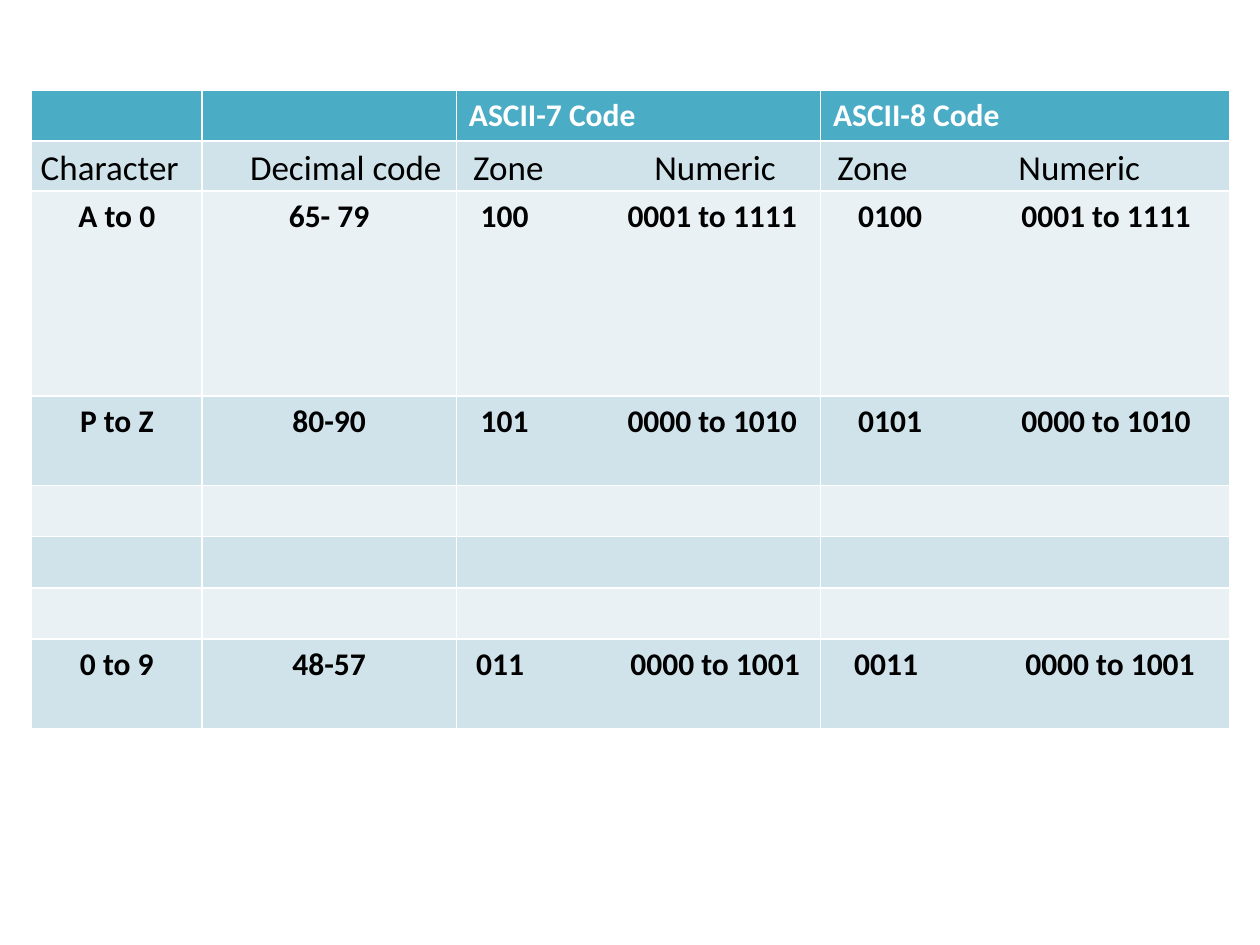
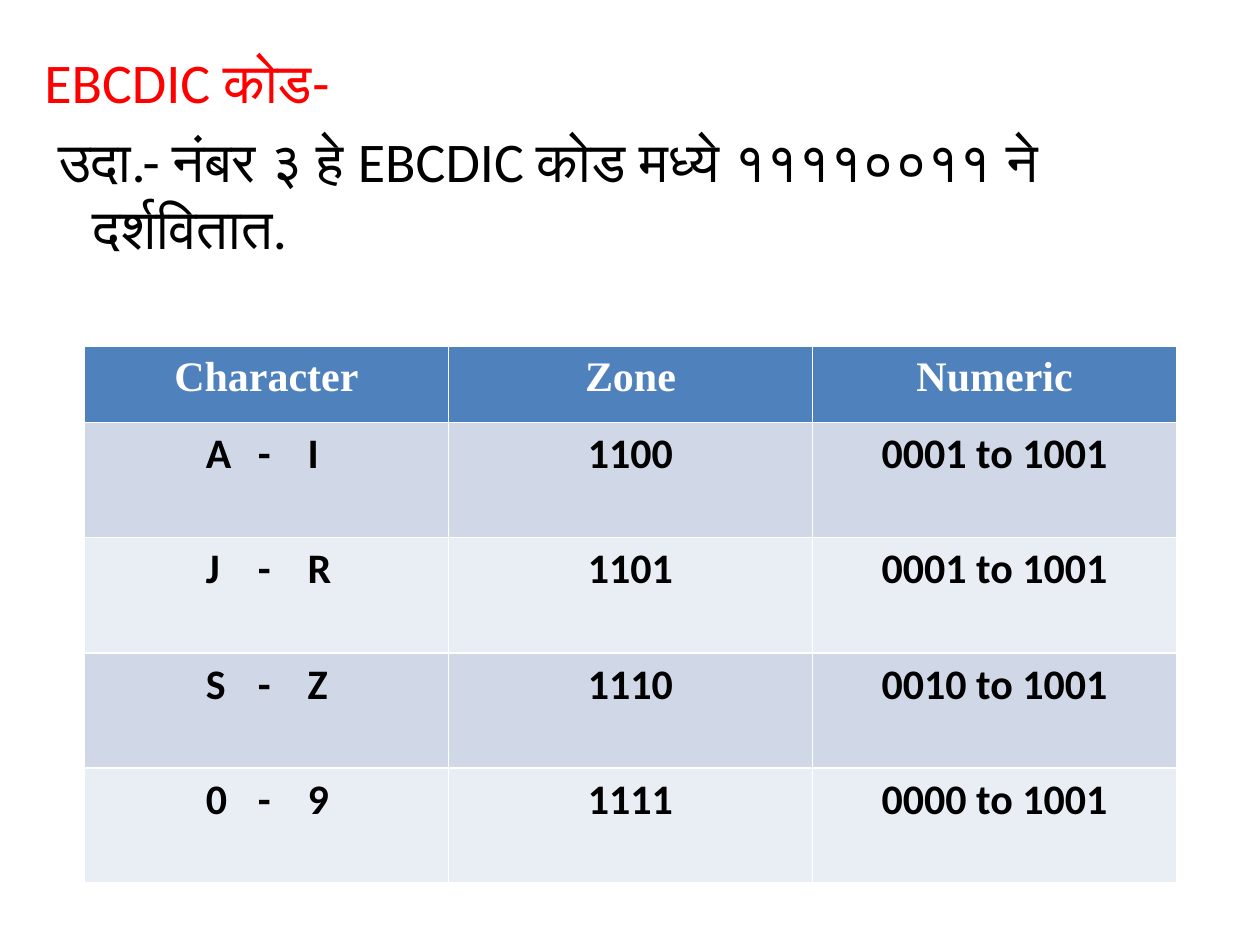
import pptx
import pptx.dml.color
import pptx.enum.text
import pptx.oxml.ns
import pptx.util
from lxml import etree


def colour(hex_value):
    return pptx.dml.color.RGBColor.from_string(hex_value)


def add_property(parent, tag, **attributes):
    return etree.SubElement(parent, pptx.oxml.ns.qn(tag), attributes)


# Shared formats
CENTER = pptx.enum.text.PP_ALIGN.CENTER
LEFT = pptx.enum.text.PP_ALIGN.LEFT
FORMATS = {
    "heading": {"name": "Calibri", "size": pptx.util.Pt(18), "bold": True},
    "serif heading": {"name": "Times New Roman", "size": pptx.util.Pt(24), "bold": True},
    "subheading": {"name": "Calibri", "size": pptx.util.Pt(20), "bold": False},
    "codes": {"name": "Calibri", "size": pptx.util.Pt(18), "bold": True},
    "large codes": {"name": "Calibri", "size": pptx.util.Pt(24), "bold": True},
    "body": {"name": "Calibri", "size": pptx.util.Pt(32), "bold": False},
}
SPACED = ("subheading", "serif heading")  # no top margin, wider lines

deck = pptx.Presentation()
deck.slide_width, deck.slide_height = pptx.util.Cm(25.4), pptx.util.Cm(19.05)

# Slide 1: ASCII codes
ascii_slide = deck.slides.add_slide(deck.slide_layouts[6])

# Slide 2: EBCDIC code, introduction
ebcdic_slide = deck.slides.add_slide(deck.slide_layouts[1])
unused_title = ebcdic_slide.shapes.title
unused_title._element.getparent().remove(unused_title._element)
intro = ebcdic_slide.placeholders[1]
intro_place = {"left": 0.64, "top": 0.84, "width": 23.93, "height": 17.35}
for side, length in intro_place.items():
    setattr(intro, side, pptx.util.Cm(length))

intro_lines = [
    ("EBCDIC कोड-", "FF0000", -0.97),
    ("उदा.- नंबर ३ हे EBCDIC कोड मध्ये ११११००११ ने दर्शवितात.", "000000", -0.69),
]
for number, (wording, text_colour, first_indent) in enumerate(intro_lines):
    line = intro.text_frame.paragraphs[0] if number == 0 else intro.text_frame.add_paragraph()
    run = line.add_run()
    run.text = wording
    for attribute, value in FORMATS["body"].items():
        setattr(run.font, attribute, value)
    run.font.color.rgb = colour(text_colour)
    properties = line._p.get_or_add_pPr()
    properties.set("marL", str(pptx.util.Cm(0.97)))
    properties.set("indent", str(pptx.util.Cm(first_indent)))
    add_property(properties, "a:buNone")

# Table contents: each row is height, format, texts.
# A text with tabs is followed by its left margin and its tab stops.
zone_7, zone_8 = (0.49, [2.96]), (0.76, [3.29])
zone_heading = ("Zone\tNumeric", 0.34, [3.65])
letters = (2.45, [1.05, 2.05])
empty_row = (1.02, "codes", [""] * 4)
code_tables = [
    {
        "slide": ascii_slide,
        "place": (0.64, 1.81),
        "columns": [3.43, 5.13, 7.34, 8.26],
        "heading fill": "4BACC6",
        "bands": ["D0E3EA", "E9F1F5"],
        "rows": [
            (1.01, "heading", ["", "", "ASCII-7 Code", "ASCII-8 Code"]),
            (1.01, "subheading", [("Character", 0.18, []), ("Decimal code", 0.97, []),
                                  zone_heading, zone_heading]),
            (4.13, "codes", ["A to 0", "65- 79", ("100\t0001 to 1111", *zone_7),
                             ("0100\t0001 to 1111", *zone_8)]),
            (1.81, "codes", ["P to Z", "80-90", ("101\t0000 to 1010", *zone_7),
                             ("0101\t0000 to 1010", *zone_8)]),
            empty_row,
            empty_row,
            empty_row,
            (1.81, "codes", ["0 to 9", "48-57", ("011\t0000 to 1001", 0.4, [3.11]),
                             ("0011\t0000 to 1001", 0.68, [3.45])]),
        ],
    },
    {
        "slide": ebcdic_slide,
        "place": (1.7, 6.99),
        "columns": [7.34] * 3,
        "heading fill": "4F81BD",
        "bands": ["D0D8E8", "E9EDF4"],
        "rows": [
            (1.53, "serif heading", ["Character", "Zone", "Numeric"]),
            (2.32, "large codes", [("A\t-\tI", *letters), "1100", "0001 to 1001"]),
            (2.32, "large codes", [("J\t-\tR", *letters), "1101", "0001 to 1001"]),
            (2.32, "large codes", [("S\t-\tZ", *letters), "1110", "0010 to 1001"]),
            (2.32, "large codes", [("0\t-\t9", *letters), "1111", "0000 to 1001"]),
        ],
    },
]

# Build both tables
for code_table in code_tables:
    rows, columns = code_table["rows"], code_table["columns"]
    left, top = code_table["place"]
    grid = code_table["slide"].shapes.add_table(
        len(rows), len(columns), pptx.util.Cm(left), pptx.util.Cm(top),
        pptx.util.Cm(sum(columns)), pptx.util.Cm(sum(row[0] for row in rows))).table
    for column, width in zip(grid.columns, columns):
        column.width = pptx.util.Cm(width)

    for row_number, (height, format_name, texts) in enumerate(rows):
        grid.rows[row_number].height = pptx.util.Cm(height)
        is_heading = row_number == 0
        band = code_table["bands"][(row_number - 1) % 2]
        for column_number, content in enumerate(texts):
            cell = grid.cell(row_number, column_number)
            cell.fill.solid()
            cell.fill.fore_color.rgb = colour(code_table["heading fill"] if is_heading else band)
            if not content:
                continue

            # Text, margins and alignment
            entry = cell.text_frame.paragraphs[0]
            if isinstance(content, str):
                wording, stops = content, []
                entry.alignment = LEFT if format_name == "heading" else CENTER
            else:
                wording, margin, stops = content
                entry.alignment = LEFT
                cell.margin_left = pptx.util.Cm(margin)
                cell.margin_right = pptx.util.Cm(0.18)
            if format_name in SPACED:
                cell.margin_top = cell.margin_bottom = 0
                entry.line_spacing = 1.15
            run = entry.add_run()
            run.text = wording
            for attribute, value in FORMATS[format_name].items():
                setattr(run.font, attribute, value)
            run.font.color.rgb = colour("FFFFFF" if is_heading else "000000")

            # Tab stops between the parts of a code
            if stops:
                tab_list = add_property(entry._p.get_or_add_pPr(), "a:tabLst")
                for stop in stops:
                    add_property(tab_list, "a:tab", pos=str(pptx.util.Cm(stop)), algn="l")

deck.save("out.pptx")
